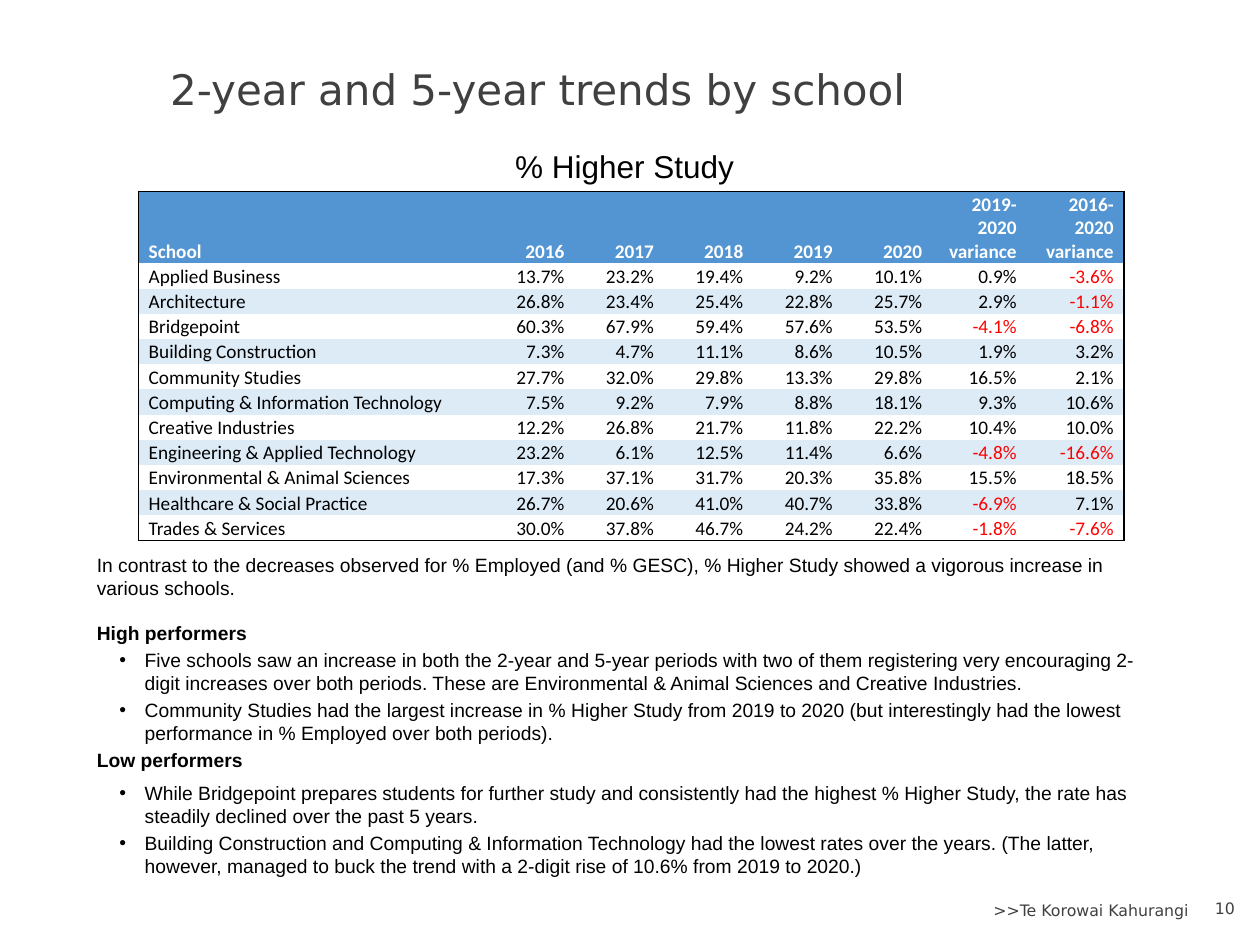
from lxml import etree
from pptx import Presentation
from pptx.dml.color import RGBColor
from pptx.enum.text import MSO_ANCHOR as Anchor, MSO_AUTO_SIZE as AutoSize, PP_ALIGN as Align
from pptx.oxml.ns import qn
from pptx.util import Inches, Pt

# Content
TITLE = "2-year and 5-year trends by school"
TABLE_TITLE = "% Higher Study"
FOOTER = ">>Te Korowai Kahurangi"
PAGE = "10"
HEADER = ["School", "2016", "2017", "2018", "2019", "2020",
          "2019-2020 variance", "2016-2020 variance"]
SCHOOLS = [
    ("Applied Business", 13.7, 23.2, 19.4, 9.2, 10.1, 0.9, -3.6),
    ("Architecture", 26.8, 23.4, 25.4, 22.8, 25.7, 2.9, -1.1),
    ("Bridgepoint", 60.3, 67.9, 59.4, 57.6, 53.5, -4.1, -6.8),
    ("Building Construction", 7.3, 4.7, 11.1, 8.6, 10.5, 1.9, 3.2),
    ("Community Studies", 27.7, 32.0, 29.8, 13.3, 29.8, 16.5, 2.1),
    ("Computing & Information Technology", 7.5, 9.2, 7.9, 8.8, 18.1, 9.3, 10.6),
    ("Creative Industries", 12.2, 26.8, 21.7, 11.8, 22.2, 10.4, 10.0),
    ("Engineering & Applied Technology", 23.2, 6.1, 12.5, 11.4, 6.6, -4.8, -16.6),
    ("Environmental & Animal Sciences", 17.3, 37.1, 31.7, 20.3, 35.8, 15.5, 18.5),
    ("Healthcare & Social Practice", 26.7, 20.6, 41.0, 40.7, 33.8, -6.9, 7.1),
    ("Trades & Services", 30.0, 37.8, 46.7, 24.2, 22.4, -1.8, -7.6),
]
# (kind, text, points before, points after)
COMMENTARY = [
    ("plain", "In contrast to the decreases observed for % Employed (and % GESC), "
     "% Higher Study showed a vigorous increase in various schools.", 0, 0),
    ("heading", "High performers", 12.7, 0),
    ("bullet", "Five schools saw an increase in both the 2-year and 5-year periods with two of "
     "them registering very encouraging 2-digit increases over both periods. These are "
     "Environmental & Animal Sciences and Creative Industries.", 2.2, 0),
    ("bullet", "Community Studies had the largest increase in % Higher Study from 2019 to 2020 "
     "(but interestingly had the lowest performance in % Employed over both periods).", 2.2, 0),
    ("heading", "Low performers", 2.2, 3),
    ("bullet", "While Bridgepoint prepares students for further study and consistently had the "
     "highest % Higher Study, the rate has steadily declined over the past 5 years.", 2.2, 0),
    ("bullet", "Building Construction and Computing & Information Technology had the lowest "
     "rates over the years. (The latter, however, managed to buck the trend with a 2-digit "
     "rise of 10.6% from 2019 to 2020.)", 2.2, 0),
]

# Style and grid
BLACK, WHITE, GREY, RED = "000000", "FFFFFF", "404040", "FF0000"
HEADER_BLUE, BAND_BLUE = "5295D2", "DDEBF7"
COLUMNS = [2.75] + [0.71] * 5 + [0.75, 0.77]
HEADER_HEIGHT, ROW_HEIGHT = 0.57, 0.2


def color(value):
    return RGBColor.from_string(value)


def style(para, size, face, ink, bold=False, align=Align.LEFT):
    para.alignment = align
    font = para.font
    font.size, font.name, font.bold = Pt(size), face, bold
    font.color.rgb = color(ink)


def add_text(slide, box, anchor=Anchor.TOP):
    frame = slide.shapes.add_textbox(*map(Inches, box)).text_frame
    frame.word_wrap = True
    frame.vertical_anchor = anchor
    return frame


def add_label(slide, box, text, *look, anchor=Anchor.MIDDLE, align=Align.RIGHT):
    para = add_text(slide, box, anchor).paragraphs[0]
    para.text = text
    style(para, *look, align=align)


def add_bullet(para):
    props = para._p.get_or_add_pPr()
    props.set("marL", str(Inches(0.38)))
    props.set("indent", str(Inches(-0.2)))
    etree.SubElement(props, qn("a:buFont"), typeface="Arial")
    etree.SubElement(props, qn("a:buChar"), char="•")


def set_borders(cell, outer):
    """Draw a black line on the outer sides and none on the others."""
    props = cell._tc.get_or_add_tcPr()
    for side in "LRTB":
        line = etree.SubElement(props, qn(f"a:ln{side}"), w=str(Pt(1)))
        if side in outer:
            fill = etree.SubElement(line, qn("a:solidFill"))
            etree.SubElement(fill, qn("a:srgbClr"), val=BLACK)
        else:
            etree.SubElement(line, qn("a:noFill"))


def fill_cell(cell, value, row, col):
    is_number = isinstance(value, float)
    edges = {"L": col == 0, "R": col == len(COLUMNS) - 1,
             "T": row == 0, "B": row == len(SCHOOLS)}
    set_borders(cell, [side for side, on in edges.items() if on])
    if row == 0 or row % 2 == 0:
        cell.fill.solid()
        cell.fill.fore_color.rgb = color(BAND_BLUE if row else HEADER_BLUE)
    else:
        cell.fill.background()
    cell.vertical_anchor = Anchor.BOTTOM
    cell.margin_left = cell.margin_right = Inches(0.08)
    cell.margin_top, cell.margin_bottom = Inches(0.01), 0
    para = cell.text_frame.paragraphs[0]
    para.text = f"{value:.1f}%" if is_number else value
    ink = WHITE if row == 0 else RED if is_number and value < 0 else BLACK
    style(para, 11, "Calibri", ink, row == 0, Align.RIGHT if col else Align.LEFT)


def add_school_table(slide):
    rows = [HEADER, *SCHOOLS]
    height = HEADER_HEIGHT + ROW_HEIGHT * len(SCHOOLS)
    table = slide.shapes.add_table(
        len(rows), len(COLUMNS), Inches(1.1), Inches(1.52),
        Inches(sum(COLUMNS)), Inches(height)).table
    table.first_row = table.horz_banding = False
    for column, width in zip(table.columns, COLUMNS):
        column.width = Inches(width)
    for r, values in enumerate(rows):
        table.rows[r].height = Inches(ROW_HEIGHT if r else HEADER_HEIGHT)
        for c, value in enumerate(values):
            fill_cell(table.cell(r, c), value, r, c)


def add_commentary(slide):
    frame = add_text(slide, (0.67, 4.34, 8.56, 2.76))
    for i, (kind, text, before, after) in enumerate(COMMENTARY):
        para = frame.add_paragraph() if i else frame.paragraphs[0]
        para.text = text
        para.space_before, para.space_after = Pt(before), Pt(after)
        if kind == "bullet":
            add_bullet(para)
        style(para, 11, "Arial", BLACK, kind == "heading")


def main():
    deck = Presentation()
    deck.slide_width, deck.slide_height = Inches(10), Inches(7.5)
    slide = deck.slides.add_slide(deck.slide_layouts[5])

    # Title
    title = slide.shapes.title
    title.left, title.top, title.width, title.height = map(Inches, (1.25, 0.42, 7.87, 0.56))
    title.text_frame.text = TITLE
    title.text_frame.auto_size = AutoSize.NONE
    title.text_frame.vertical_anchor = Anchor.MIDDLE
    style(title.text_frame.paragraphs[0], 24, "DejaVu Sans", GREY)

    # Table with its heading, then the commentary
    add_label(slide, (3.99, 1.12, 1.94, 0.4), TABLE_TITLE, 18, "Arial", BLACK,
              anchor=Anchor.TOP, align=Align.LEFT)
    add_school_table(slide)
    add_commentary(slide)

    # Footer and page number
    add_label(slide, (5.38, 7.1, 4.15, 0.25), FOOTER, 9, "DejaVu Sans", GREY)
    add_label(slide, (9.44, 7.08, 0.46, 0.25), PAGE, 9, "DejaVu Sans", GREY)

    deck.save("out.pptx")


if __name__ == "__main__":
    main()
